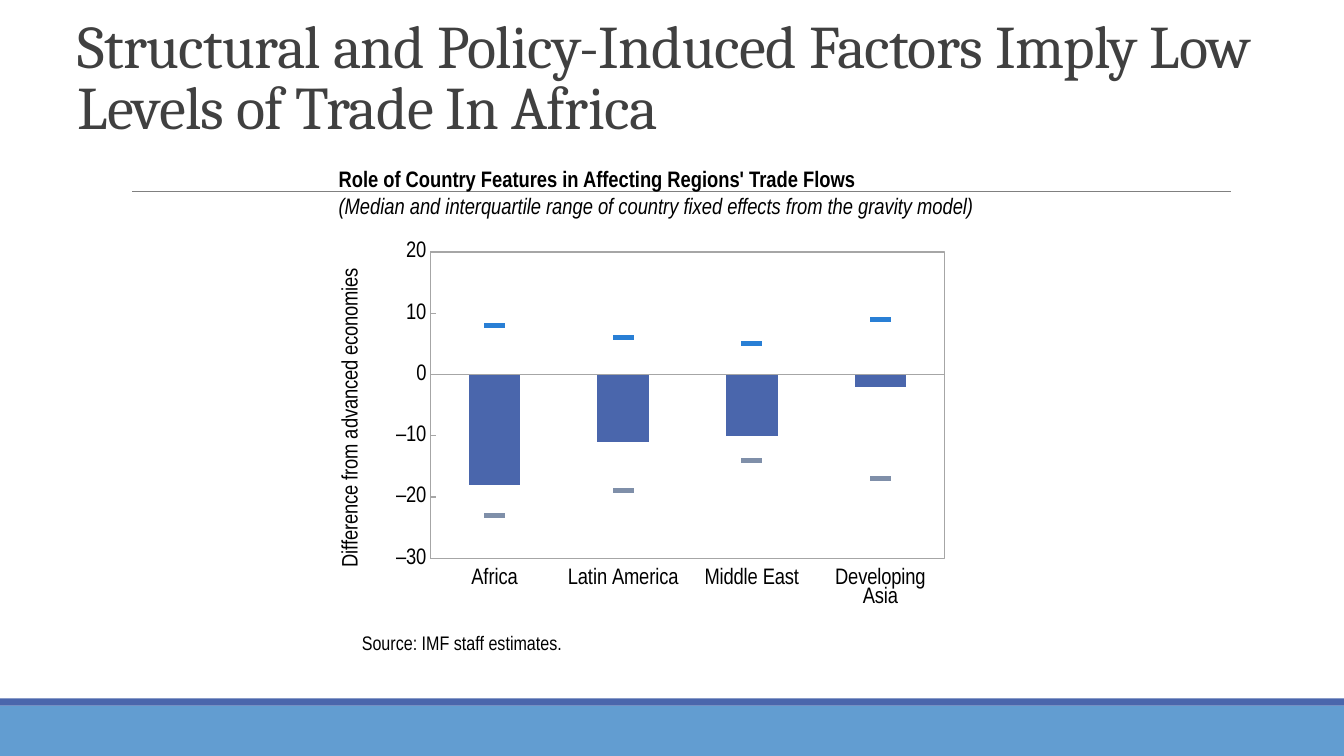
from dataclasses import dataclass

from lxml.etree import SubElement, fromstring
from pptx import Presentation
from pptx.chart.data import CategoryChartData
from pptx.dml.color import RGBColor
from pptx.enum.chart import XL_CHART_TYPE as ChartType
from pptx.enum.chart import XL_MARKER_STYLE as MarkerStyle
from pptx.enum.chart import XL_TICK_LABEL_POSITION as LabelPosition
from pptx.enum.chart import XL_TICK_MARK as TickMark
from pptx.enum.shapes import MSO_CONNECTOR as Connector
from pptx.enum.shapes import MSO_SHAPE as Shape
from pptx.enum.text import MSO_ANCHOR as Anchor
from pptx.enum.text import MSO_AUTO_SIZE as AutoSize
from pptx.enum.text import PP_ALIGN as Align
from pptx.oxml.ns import nsdecls, qn
from pptx.util import Pt

EMU_PER_PX = 9144
TITLE_ONLY = 5
SLIDE_SIZE = (1333, 750)
REGIONS = ("Africa", "Latin America", "Middle East", "Developing Asia")
TRADE_EFFECTS = {
    "Series 1": (-18, -11, -10, -2),
    "Series 2": (8, 6, 5, 9),
    "Series 3": (-23, -19, -14, -17),
}


@dataclass(frozen=True)
class Theme:
    title_font: str = "Cambria"
    body_font: str = "Arial Narrow"
    title_size: float = 43.2
    body_size: float = 16
    source_size: float = 14
    title_color: str = "404040"
    text: str = "000000"
    paper: str = "FFFFFF"
    footer: str = "629DD1"
    accent: str = "4A66AC"
    rule: str = "808080"
    axis: str = "A6A6A6"
    upper: str = "297FD5"
    lower: str = "7F8FA9"


def px(*lengths):
    return [length * EMU_PER_PX for length in lengths]


def color(code):
    return RGBColor.from_string(code)


def paint(fill, code):
    fill.solid()
    fill.fore_color.rgb = color(code)


def set_font(font, name, size, code, bold=False, italic=False):
    font.name, font.size = name, Pt(size)
    font.bold, font.italic = bold, italic
    font.color.rgb = color(code)


def chart_area_style(fill_xml, line_xml):
    return fromstring(
        f'<c:spPr {nsdecls("c", "a")}>{fill_xml}<a:ln w="9525">{line_xml}</a:ln></c:spPr>'
    )


def solid_xml(code):
    return f'<a:solidFill><a:srgbClr val="{code}"/></a:solidFill>'


def manual_layout(**values):
    layout = fromstring(f'<c:layout {nsdecls("c")}><c:manualLayout/></c:layout>')
    for name, value in values.items():
        SubElement(layout[0], qn(f"c:{name}"), val=str(value))
    return layout


class SlideBuilder:
    def __init__(self, presentation, theme):
        self.theme = theme
        self.slide = presentation.slides.add_slide(presentation.slide_layouts[TITLE_ONLY])
        self.shapes = self.slide.shapes

    def title(self, text, box):
        title = self.shapes.title
        title.left, title.top, title.width, title.height = px(*box)
        frame = title.text_frame
        frame.text = text
        frame.auto_size = AutoSize.NONE
        frame.vertical_anchor = Anchor.BOTTOM
        paragraph = frame.paragraphs[0]
        paragraph.alignment = Align.LEFT
        paragraph.line_spacing = 0.85
        font = paragraph.runs[0].font
        set_font(font, self.theme.title_font, self.theme.title_size, self.theme.title_color)
        paragraph.runs[0]._r.get_or_add_rPr().set("spc", "-50")

    def band(self, box, code):
        shape = self.shapes.add_shape(Shape.RECTANGLE, *px(*box))
        shape.shadow.inherit = False
        paint(shape.fill, code)
        shape.line.fill.background()
        return shape

    def rule(self, start, end, code):
        line = self.shapes.add_connector(Connector.STRAIGHT, *px(*start, *end))
        line.line.color.rgb = color(code)
        line.line.width = Pt(0.5)
        SubElement(line._element.spPr, qn("a:effectLst"))

    def heading(self, box, title, subtitle):
        frame = self.shapes.add_textbox(*px(*box)).text_frame
        frame.word_wrap = True
        frame.text = f"{title}\n{subtitle}"
        for paragraph, bold in zip(frame.paragraphs, (True, False)):
            set_font(paragraph.runs[0].font, self.theme.body_font, self.theme.body_size,
                     self.theme.text, bold, not bold)

    def source(self, box, text):
        frame = self.band(box, self.theme.paper).text_frame
        frame.word_wrap = True
        frame.vertical_anchor = Anchor.TOP
        frame.text = text
        paragraph = frame.paragraphs[0]
        paragraph.alignment = Align.LEFT
        set_font(paragraph.runs[0].font, self.theme.body_font,
                 self.theme.source_size, self.theme.text)

    def range_chart(self, box, categories, values, axis_title):
        data = CategoryChartData()
        data.categories = categories
        for name, numbers in values.items():
            data.add_series(name, numbers)
        chart = self.shapes.add_chart(ChartType.COLUMN_CLUSTERED, *px(*box), data).chart
        chart.has_legend = False
        chart.has_title = False
        set_font(chart.font, self.theme.body_font, self.theme.body_size, self.theme.text)
        self.split_markers(chart)
        self.style_series(chart)
        self.style_axes(chart, axis_title)
        self.style_areas(chart)

    def split_markers(self, chart):
        bars = chart.plots[0]._element
        lines = fromstring(
            f'<c:lineChart {nsdecls("c")}><c:grouping val="standard"/>'
            '<c:varyColors val="0"/></c:lineChart>'
        )
        for series in bars.findall(qn("c:ser"))[1:]:
            for invert in series.findall(qn("c:invertIfNegative")):
                series.remove(invert)
            lines.append(series)
        SubElement(lines, qn("c:marker"), val="1")
        for axis in bars.findall(qn("c:axId")):
            SubElement(lines, qn("c:axId"), val=axis.get("val"))
        bars.addnext(fromstring_like(lines))

    def style_series(self, chart):
        bars, markers = chart.plots
        bars.gap_width = 150
        bars.vary_by_categories = False
        bars.series[0].invert_if_negative = False
        paint(bars.series[0].format.fill, self.theme.accent)
        for series, code in zip(markers.series, (self.theme.upper, self.theme.lower)):
            series.smooth = False
            series.format.line.fill.background()
            series.marker.style = MarkerStyle.DASH
            series.marker.size = 14
            paint(series.marker.format.fill, code)
            series.marker.format.line.fill.background()

    def style_axes(self, chart, axis_title):
        category, value = chart.category_axis, chart.value_axis
        category.tick_label_position = LabelPosition.LOW
        value.minimum_scale, value.maximum_scale, value.major_unit = -30, 20, 10
        value.tick_labels.number_format = "0;\\–0"
        value.tick_labels.number_format_is_linked = False
        for axis, tick in ((category, TickMark.NONE), (value, TickMark.INSIDE)):
            axis.has_major_gridlines = False
            axis.major_tick_mark = tick
            axis.minor_tick_mark = TickMark.NONE
            axis.format.line.color.rgb = color(self.theme.axis)
            axis.format.line.width = Pt(0.75)
            set_font(axis.tick_labels.font, self.theme.body_font,
                     self.theme.body_size, self.theme.text)
        frame = value.axis_title.text_frame
        frame.text = axis_title
        set_font(frame.paragraphs[0].runs[0].font, self.theme.body_font,
                 self.theme.body_size, self.theme.text)
        frame._txBody.find(qn("a:bodyPr")).set("rot", "-5400000")
        title = value.axis_title._element
        for layout in title.findall(qn("c:layout")):
            title.remove(layout)
        title.find(qn("c:tx")).addnext(
            manual_layout(xMode="edge", yMode="edge", x=0.01, y=0.08))

    def style_areas(self, chart):
        chart_xml = chart._chartSpace.find(qn("c:chart"))
        plot_area = chart_xml.find(qn("c:plotArea"))
        for layout in plot_area.findall(qn("c:layout")):
            plot_area.remove(layout)
        plot_area.insert(0, manual_layout(layoutTarget="inner", xMode="edge", yMode="edge",
                                          x=0.16, y=0.05, w=0.81, h=0.76))
        plot_area.append(chart_area_style("<a:noFill/>", solid_xml(self.theme.axis)))
        chart_xml.addnext(chart_area_style(solid_xml(self.theme.paper), "<a:noFill/>"))


def fromstring_like(element):
    return element


def main():
    presentation = Presentation()
    presentation.slide_width, presentation.slide_height = px(*SLIDE_SIZE)
    theme = Theme()
    builder = SlideBuilder(presentation, theme)
    builder.band((0, 700, 1333, 50), theme.footer)
    builder.band((0, 693, 1333, 7), theme.accent)
    builder.rule((131, 190), (1221, 190), theme.rule)
    builder.title("Structural and Policy-Induced Factors Imply Low Levels of Trade In Africa",
                  (67, 21, 1200, 125))
    builder.range_chart((326, 230, 630, 400), REGIONS, TRADE_EFFECTS,
                        "Difference from advanced economies")
    builder.heading((326, 159, 669, 52),
                    "Role of Country Features in Affecting Regions' Trade Flows",
                    "(Median and interquartile range of country fixed effects from the gravity model)")
    builder.source((349, 621, 285, 49), "Source: IMF staff estimates.")
    presentation.save("out.pptx")


if __name__ == "__main__":
    main()
